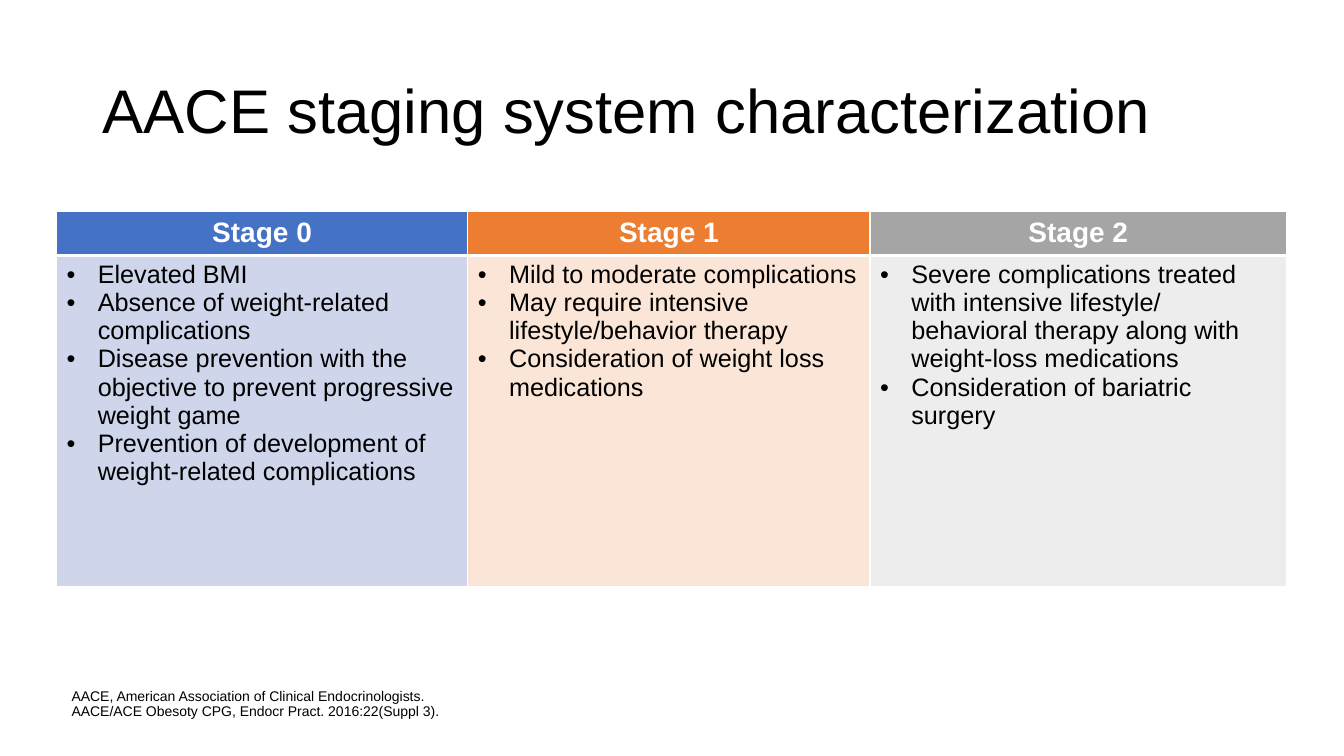
"""Build a slide with a three-column table of the AACE staging system."""
from lxml import etree
from pptx import Presentation
from pptx.dml.color import RGBColor
from pptx.enum.text import MSO_ANCHOR, PP_ALIGN
from pptx.oxml.ns import qn
from pptx.util import Inches, Pt

TITLE = "AACE staging system characterization"
FOOTNOTE = ("AACE, American Association of Clinical Endocrinologists.\n"
            "AACE/ACE Obesoty CPG, Endocr Pract. 2016:22(Suppl 3).")
STAGES = [
    ("Stage 0", 4.08, "4472C4", "CFD5EA", [
        "Elevated BMI",
        "Absence of weight-related complications",
        "Disease prevention with the objective to prevent progressive weight game",
        "Prevention of development of weight-related complications"]),
    ("Stage 1", 3.99, "ED7D31", "FBE5D6", [
        "Mild to moderate complications",
        "May require intensive lifestyle/behavior therapy",
        "Consideration of weight loss medications"]),
    ("Stage 2", 4.13, "A5A5A5", "EDEDED", [
        "Severe complications treated with intensive lifestyle/\n"
        "behavioral therapy along with weight-loss medications",
        "Consideration of bariatric surgery"]),
]
ROW_HEIGHTS = [0.42, 3.29]
INDENT = Inches(0.31)


def rgb(value):
    return RGBColor.from_string(value)


def write(p, text, size, color="000000", bold=False, align=PP_ALIGN.LEFT):
    p.text = text
    p.alignment = align
    for r in p.runs:
        r.font.name = "Arial"
        r.font.size = Pt(size)
        r.font.bold = bold
        r.font.color.rgb = rgb(color)


def add_bullet(p):
    pPr = p._p.get_or_add_pPr()
    pPr.set("marL", str(INDENT))
    pPr.set("indent", str(-INDENT))
    etree.SubElement(pPr, qn("a:buFont")).set("typeface", "Arial")
    etree.SubElement(pPr, qn("a:buChar")).set("char", "•")


def style_cell(cell, fill, top, bottom):
    cell.fill.solid()
    cell.fill.fore_color.rgb = rgb(fill)
    tcPr = cell._tc.get_or_add_tcPr()
    borders = [("a:lnL", 1), ("a:lnR", 1), ("a:lnT", top), ("a:lnB", bottom)]
    for i, (tag, width) in enumerate(borders):
        ln = etree.Element(qn(tag), w=str(Pt(width)))
        solid = etree.SubElement(ln, qn("a:solidFill"))
        etree.SubElement(solid, qn("a:srgbClr")).set("val", "FFFFFF")
        tcPr.insert(i, ln)


def add_stage_table(s):
    widths = [stage[1] for stage in STAGES]
    table = s.shapes.add_table(
        len(ROW_HEIGHTS), len(STAGES), Inches(0.56), Inches(2.1),
        Inches(sum(widths)), Inches(sum(ROW_HEIGHTS))).table
    for row, height in zip(table.rows, ROW_HEIGHTS):
        row.height = Inches(height)
    for col, (name, width, dark, light, points) in enumerate(STAGES):
        table.columns[col].width = Inches(width)
        head, body = table.cell(0, col), table.cell(1, col)
        style_cell(head, dark, 1, 3)
        style_cell(body, light, 3, 1)
        write(head.text_frame.paragraphs[0], name, 20, "FFFFFF", True, PP_ALIGN.CENTER)
        tf = body.text_frame
        for i, point in enumerate(points):
            p = tf.add_paragraph() if i else tf.paragraphs[0]
            write(p, point, 18)
            add_bullet(p)


def add_footnote(s):
    sp = s.shapes.add_textbox(Inches(0.71), Inches(6.79), Inches(11.71), Inches(0.35))
    tf = sp.text_frame
    tf.word_wrap = True
    tf.vertical_anchor = MSO_ANCHOR.BOTTOM
    tf.margin_left = tf.margin_right = tf.margin_top = tf.margin_bottom = 0
    p = tf.paragraphs[0]
    write(p, FOOTNOTE, 10)
    p.line_spacing = 0.9


def main():
    prs = Presentation()
    prs.slide_width, prs.slide_height = Inches(13.33), Inches(7.5)
    s = prs.slides.add_slide(prs.slide_layouts[5])
    title = s.shapes.title
    title.left, title.top = Inches(0.92), Inches(0.4)
    title.width, title.height = Inches(11.5), Inches(1.45)
    title.text_frame.vertical_anchor = MSO_ANCHOR.MIDDLE
    p = title.text_frame.paragraphs[0]
    write(p, TITLE, 44)
    p.line_spacing = 0.9
    add_footnote(s)
    add_stage_table(s)
    prs.save("out.pptx")


if __name__ == "__main__":
    main()
